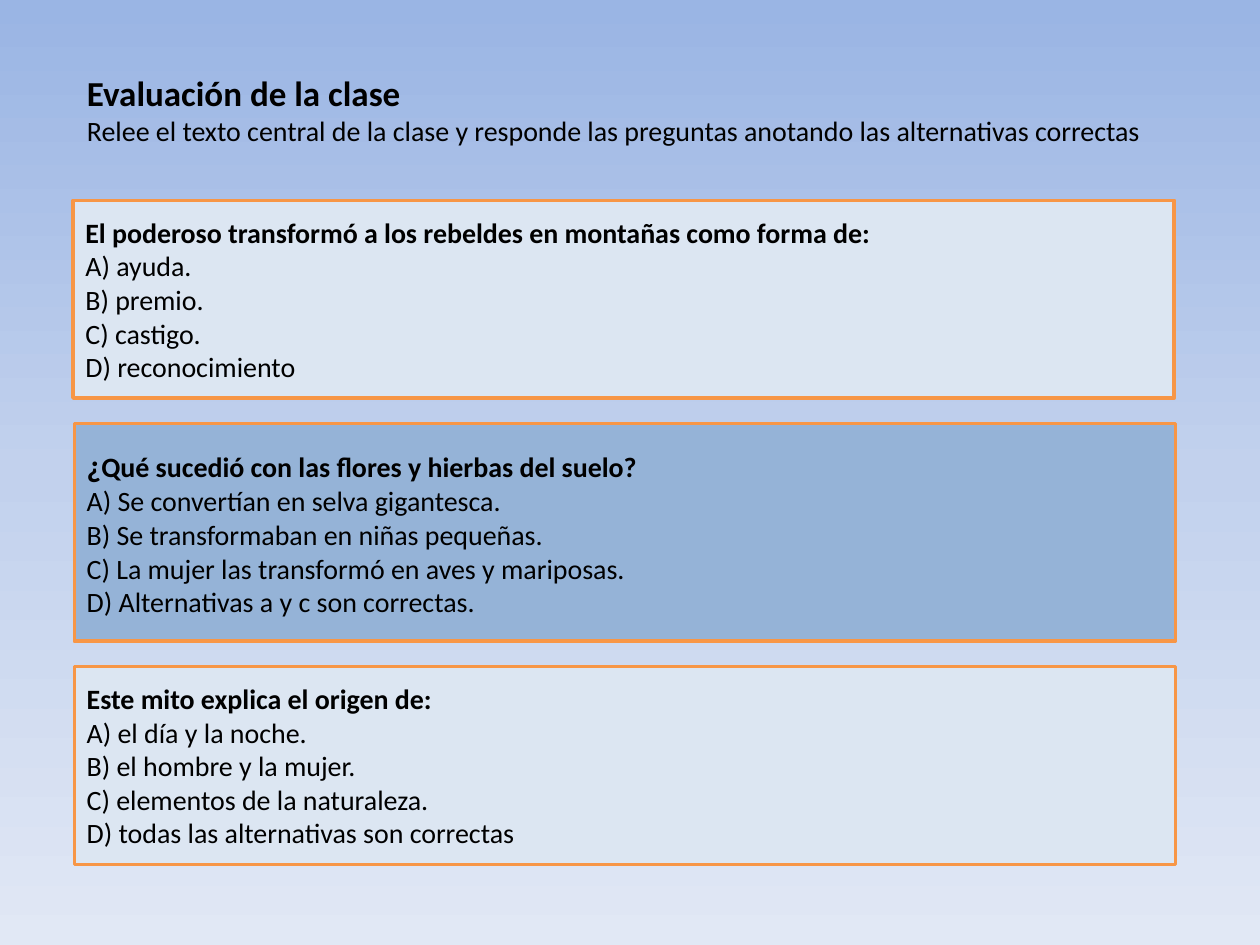
from copy import deepcopy
from dataclasses import dataclass

from pptx import Presentation
from pptx.dml.color import RGBColor
from pptx.enum.shapes import MSO_SHAPE
from pptx.enum.text import MSO_ANCHOR, MSO_AUTO_SIZE, PP_ALIGN
from pptx.oxml.ns import qn
from pptx.util import Inches, Pt


@dataclass(frozen=True)
class Theme:
    font: str = "Calibri"
    text: str = "000000"
    border: str = "F79646"
    light: str = "DCE6F2"
    strong: str = "95B3D7"
    gradient: tuple = ((0, "9AB5E4"), (0.5, "C2D1ED"), (1, "E1E8F5"))
    heading_size: int = 20
    mark_size: int = 18
    body_size: int = 16
    border_width: int = 2


class SlideBuilder:
    def __init__(self, page, theme):
        self.page = page
        self.theme = theme

    def background(self):
        fill = self.page.background.fill
        fill.gradient()
        fill.gradient_angle = 270
        # The default gradient has two stops; add a middle one
        stops = self.page.element.find(".//" + qn("a:gsLst"))
        stops.insert(1, deepcopy(stops[0]))
        for stop, (position, color) in zip(fill.gradient_stops, self.theme.gradient):
            stop.position = position
            stop.color.rgb = RGBColor.from_string(color)

    def style(self, paragraph, size, bold, align):
        paragraph.alignment = align
        font = paragraph.font
        font.name = self.theme.font
        font.size = Pt(size)
        font.bold = bold
        font.color.rgb = RGBColor.from_string(self.theme.text)

    def title(self, heading, instruction, left, top, width, height):
        box = self.page.shapes.title
        box.left, box.top = Inches(left), Inches(top)
        box.width, box.height = Inches(width), Inches(height)
        frame = box.text_frame
        frame.text = f"{heading}\n{instruction}"
        frame.word_wrap = True
        frame.auto_size = MSO_AUTO_SIZE.NONE
        frame.vertical_anchor = MSO_ANCHOR.TOP
        first, second = frame.paragraphs
        self.style(first, self.theme.heading_size, True, PP_ALIGN.LEFT)
        self.style(second, self.theme.body_size, False, PP_ALIGN.LEFT)

    def question(self, prompt, options, color, left, top, width, height):
        box = self.page.shapes.add_shape(
            MSO_SHAPE.RECTANGLE, Inches(left), Inches(top), Inches(width), Inches(height))
        box.shadow.inherit = False
        box.fill.solid()
        box.fill.fore_color.rgb = RGBColor.from_string(color)
        box.line.color.rgb = RGBColor.from_string(self.theme.border)
        box.line.width = Pt(self.theme.border_width)
        frame = box.text_frame
        frame.word_wrap = True
        frame.vertical_anchor = MSO_ANCHOR.MIDDLE

        # Bold prompt, with a larger opening question mark
        paragraph = frame.paragraphs[0]
        self.style(paragraph, self.theme.body_size, True, PP_ALIGN.JUSTIFY)
        if prompt.startswith("¿"):
            span = paragraph.add_run()
            span.text = "¿"
            span.font.size = Pt(self.theme.mark_size)
        paragraph.add_run().text = prompt.removeprefix("¿")

        # Lettered answers
        for letter, option in zip("ABCD", options):
            paragraph = frame.add_paragraph()
            paragraph.text = f"{letter}) {option}"
            self.style(paragraph, self.theme.body_size, False, PP_ALIGN.JUSTIFY)


def main():
    deck = Presentation()
    deck.slide_width, deck.slide_height = Inches(10), Inches(7.5)
    theme = Theme()
    builder = SlideBuilder(deck.slides.add_slide(deck.slide_layouts[5]), theme)
    builder.background()
    builder.title(
        "Evaluación de la clase",
        "Relee el texto central de la clase y responde las preguntas "
        "anotando las alternativas correctas",
        0.59, 0.52, 8.82, 1.01)

    # Question boxes, stacked with an equal gap
    questions = [
        ("El poderoso transformó a los rebeldes en montañas como forma de:",
         ["ayuda.", "premio.", "castigo.", "reconocimiento"],
         theme.light, 0.58, 1.57),
        ("¿Qué sucedió con las flores y hierbas del suelo?",
         ["Se convertían en selva gigantesca.",
          "Se transformaban en niñas pequeñas.",
          "La mujer las transformó en aves y mariposas.",
          "Alternativas a y c son correctas."],
         theme.strong, 0.59, 1.73),
        ("Este mito explica el origen de:",
         ["el día y la noche.", "el hombre y la mujer.",
          "elementos de la naturaleza.", "todas las alternativas son correctas"],
         theme.light, 0.59, 1.57),
    ]
    top, gap = 1.59, 0.2
    for prompt, options, color, left, height in questions:
        builder.question(prompt, options, color, left, top, 8.74, height)
        top += height + gap

    deck.save("out.pptx")


if __name__ == "__main__":
    main()
